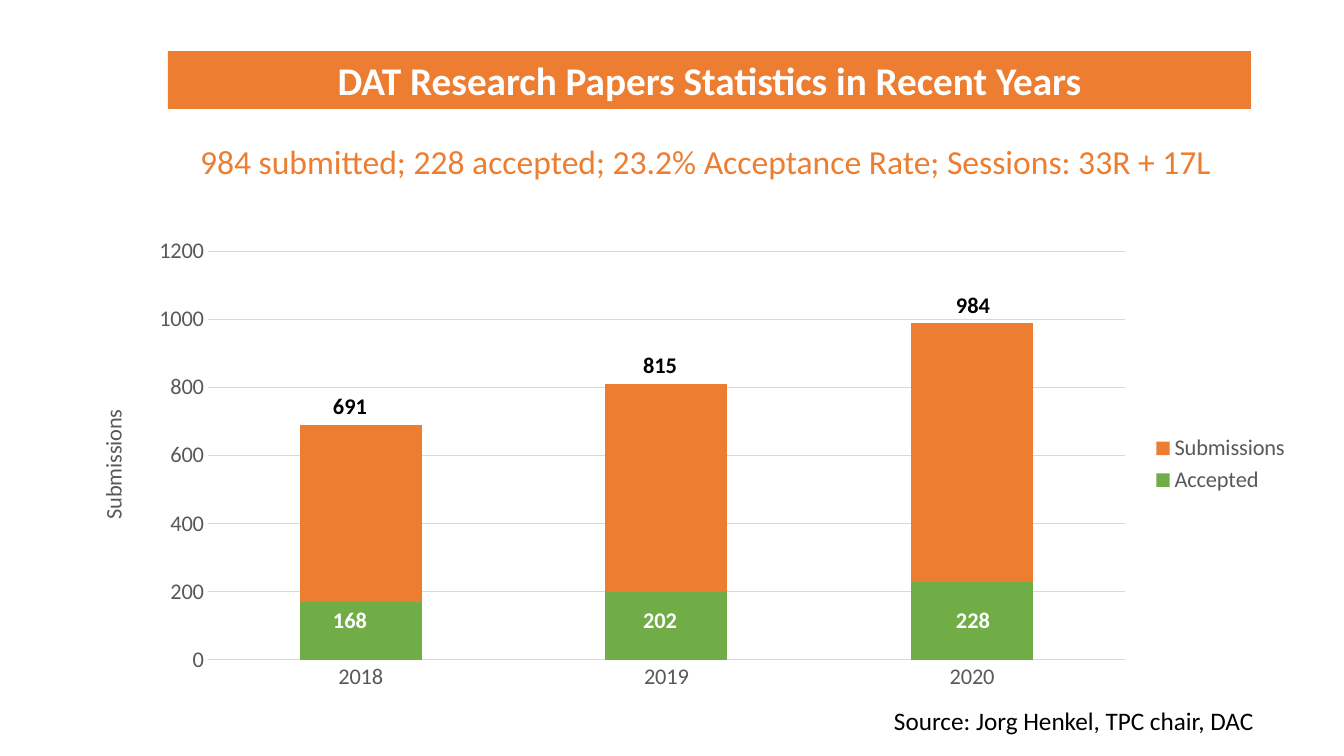
"""Build the paper statistics slide."""
from dataclasses import dataclass

from lxml import etree
from pptx import Presentation
from pptx.chart.data import CategoryChartData
from pptx.dml.color import RGBColor
from pptx.enum.chart import XL_CHART_TYPE, XL_LEGEND_POSITION, XL_TICK_MARK
from pptx.enum.shapes import MSO_SHAPE
from pptx.enum.text import MSO_ANCHOR, PP_ALIGN
from pptx.oxml.ns import qn
from pptx.util import Pt

STACKED = XL_CHART_TYPE.COLUMN_STACKED
LEGEND_RIGHT = XL_LEGEND_POSITION.RIGHT
NO_TICK = XL_TICK_MARK.NONE
RECTANGLE = MSO_SHAPE.RECTANGLE
TOP, MIDDLE = MSO_ANCHOR.TOP, MSO_ANCHOR.MIDDLE
LEFT, CENTER = PP_ALIGN.LEFT, PP_ALIGN.CENTER

YEARS = ("2018", "2019", "2020")
ACCEPTED = (170, 200, 230)
REMAINING = (520, 610, 760)
COUNT_LABELS = (
    (160, 114, "691", "168"),
    (381.5, 85, "815", "202"),
    (605, 42, "984", "228"),
)
ACCEPTED_LABEL_TOP = 266.5


@dataclass(frozen=True)
class Theme:
    """Colours and type sizes of the slide."""
    font: str = "Calibri"
    orange: RGBColor = RGBColor(0xED, 0x7D, 0x31)
    green: RGBColor = RGBColor(0x70, 0xAD, 0x47)
    grey: RGBColor = RGBColor(0x59, 0x59, 0x59)
    grid: RGBColor = RGBColor(0xD9, 0xD9, 0xD9)
    black: RGBColor = RGBColor(0, 0, 0)
    white: RGBColor = RGBColor(0xFF, 0xFF, 0xFF)
    title: int = 28
    subtitle: int = 24
    source: int = 18
    label: int = 16
    chart: int = 10


THEME = Theme()


def style_font(font, size, color, bold=False):
    """Apply the theme font with a size, colour and weight."""
    font.name, font.size, font.bold = THEME.font, Pt(size), bold
    font.color.rgb = color


def write(shape, text, *, size, color, bold=False, align=CENTER,
          anchor=TOP, wrap=True, spacing=None):
    """Write one formatted paragraph into a shape."""
    frame = shape.text_frame
    frame.word_wrap, frame.vertical_anchor = wrap, anchor
    paragraph = frame.paragraphs[0]
    paragraph.alignment, paragraph.line_spacing = align, spacing
    run = paragraph.add_run()
    run.text = text
    style_font(run.font, size, color, bold)


def add_text(slide, box, text, **style):
    """Add a text box at the given box in points."""
    write(slide.shapes.add_textbox(*map(Pt, box)), text, **style)


def add_heading(slide, box):
    """Draw the title banner with the summary line below it."""
    left, top, width, height = box
    banner = slide.shapes.add_shape(RECTANGLE, *map(Pt, (left, top, width, 41.2)))
    banner.shadow.inherit = False
    banner.fill.solid()
    banner.fill.fore_color.rgb = THEME.orange
    banner.line.fill.background()
    write(banner, "DAT Research Papers Statistics in Recent Years",
          size=THEME.title, color=THEME.white, bold=True, anchor=MIDDLE)
    add_text(slide, (left, top + height - 56, width, 56),
             "984 submitted; 228 accepted; 23.2% Acceptance Rate; Sessions: 33R + 17L ",
             size=THEME.subtitle, color=THEME.orange, anchor=MIDDLE, spacing=0.9)


def set_plot_layout(chart, fractions):
    """Fix the inner plot area as fractions of the chart."""
    plot_area = chart.plots[0]._element.getparent()
    layout = plot_area.find(qn("c:layout"))
    if layout is None:
        layout = etree.Element(qn("c:layout"))
        plot_area.insert(0, layout)
    manual = etree.SubElement(layout, qn("c:manualLayout"))
    settings = [("layoutTarget", "inner"), ("xMode", "edge"), ("yMode", "edge")]
    settings += zip("xywh", fractions)
    for tag, value in settings:
        etree.SubElement(manual, qn(f"c:{tag}")).set("val", str(value))


def style_axes(chart):
    """Format the year axis and the submissions axis."""
    years, papers = chart.category_axis, chart.value_axis
    for axis in (years, papers):
        axis.major_tick_mark = axis.minor_tick_mark = NO_TICK
        style_font(axis.tick_labels.font, THEME.label, THEME.grey)
    papers.minimum_scale, papers.maximum_scale, papers.major_unit = 0, 1200, 200
    papers.format.line.fill.background()
    for line in (years.format.line, papers.major_gridlines.format.line):
        line.color.rgb, line.width = THEME.grid, Pt(0.75)
    caption = papers.axis_title.text_frame.paragraphs[0].add_run()
    caption.text = "Submissions"
    style_font(caption.font, THEME.label, THEME.grey)


def add_statistics(slide, box):
    """Draw the stacked chart and the count labels on its columns."""
    left, top, width, height = box
    data = CategoryChartData()
    data.categories = YEARS
    data.add_series("Accepted", ACCEPTED)
    data.add_series("Submissions", REMAINING)
    chart = slide.shapes.add_chart(STACKED, *map(Pt, box), data).chart
    chart.has_title = False
    style_font(chart.font, THEME.chart, THEME.black)
    chart.has_legend = True
    chart.legend.position = LEGEND_RIGHT
    chart.legend.include_in_layout = False
    style_font(chart.legend.font, THEME.label, THEME.grey)
    columns = chart.plots[0]
    columns.gap_width, columns.overlap, columns.vary_by_categories = 150, 100, False
    for series, color in zip(columns.series, (THEME.green, THEME.orange)):
        series.format.fill.solid()
        series.format.fill.fore_color.rgb = color
    style_axes(chart)
    set_plot_layout(chart, (94.5 / width, 17 / height, 655 / width, 291.8 / height))

    for label_left, submitted_top, submitted, accepted in COUNT_LABELS:
        for label_top, count, color in (
                (submitted_top, submitted, THEME.black),
                (ACCEPTED_LABEL_TOP, accepted, THEME.white)):
            add_text(slide, (left + label_left, top + label_top, 72, 72), count,
                     size=THEME.label, color=color, bold=True, wrap=False)


def add_source(slide, box):
    """Write the source line."""
    add_text(slide, box, "Source: Jorg Henkel, TPC chair, DAC",
             size=THEME.source, color=THEME.black, align=LEFT, wrap=False)


def main():
    """Assemble and save the slide."""
    deck = Presentation()
    deck.slide_width, deck.slide_height = Pt(960), Pt(540)
    slide = deck.slides.add_slide(deck.slide_layouts[6])
    add_statistics(slide, (54, 162.6, 875, 338))
    add_heading(slide, (120, 36.6, 773.5, 108.5))
    add_source(slide, (631.5, 500.5, 274, 29))
    deck.save("out.pptx")


if __name__ == "__main__":
    main()
